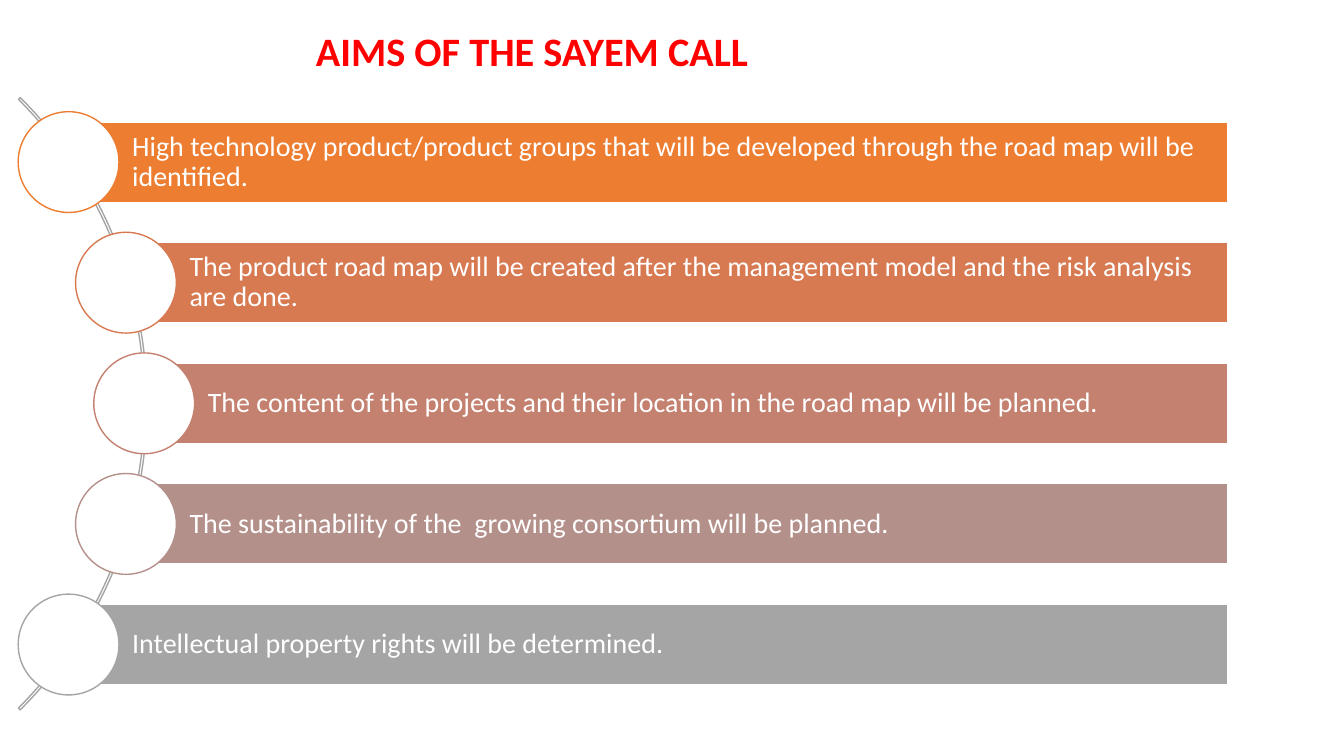
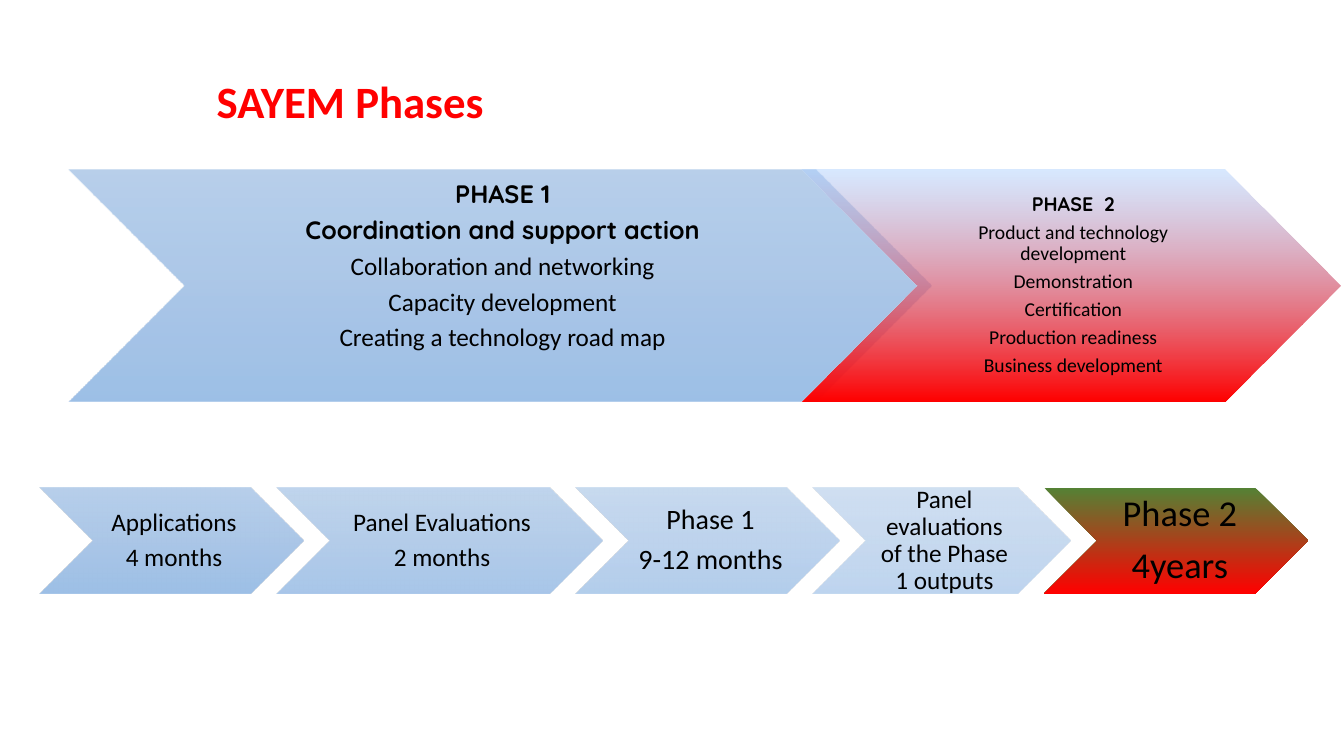
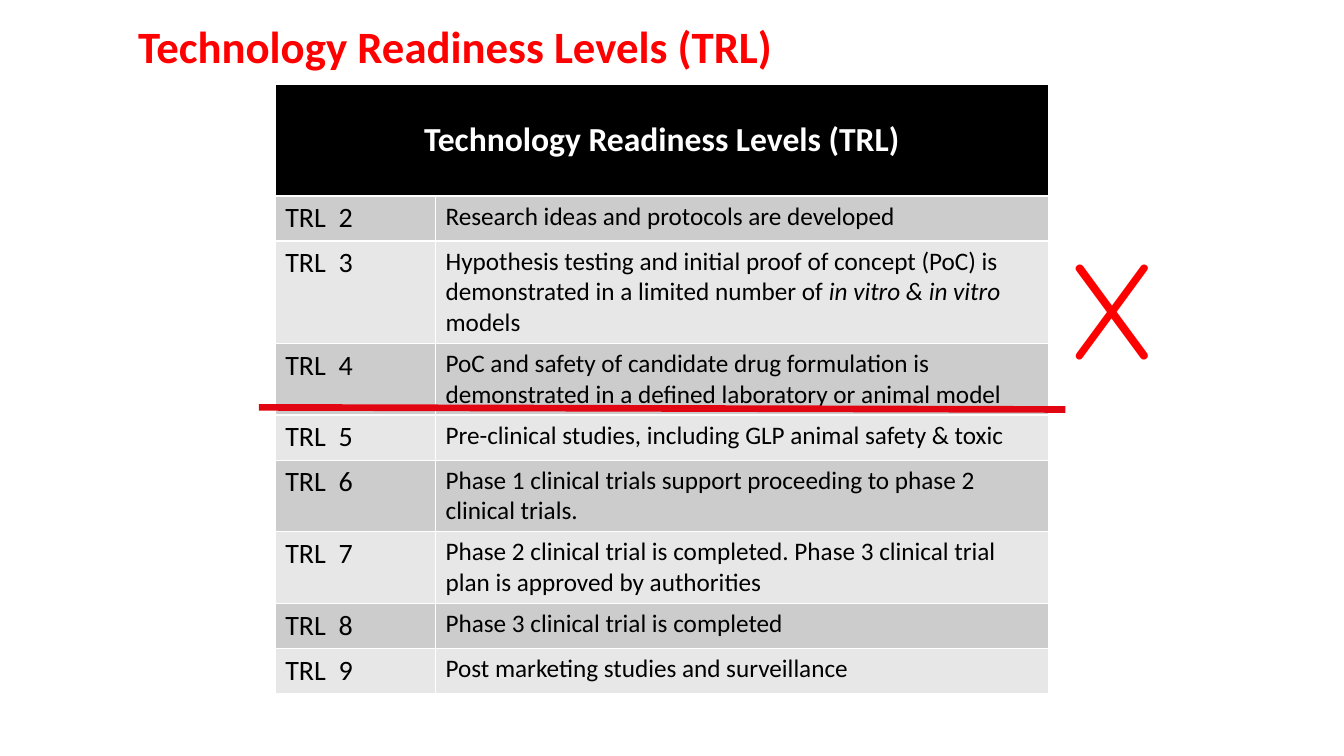
"""Build three slides on the SAYEM call: its aims, its phases and the readiness levels."""
import lxml.etree
import pptx
import pptx.dml.color
import pptx.enum.shapes
import pptx.enum.text
import pptx.oxml.ns
import pptx.util

Pt = pptx.util.Pt
SHAPE = pptx.enum.shapes.MSO_SHAPE
ALIGN = pptx.enum.text.PP_ALIGN
MIDDLE = pptx.enum.text.MSO_ANCHOR.MIDDLE
qn = pptx.oxml.ns.qn

COLORS = {
    "title": "FF0000", "text": "000000", "white": "FFFFFF", "arc": "A5A5A5",
    "header": "000000", "row_dark": "CCCCCC", "row_light": "E7E7E7",
    "cutoff": "E20613", "cross": "FF0000",
}
BODY_FONT, ACCENT_FONT = "Calibri", "Quicksand"

AIMS = [
    ("High technology product/product groups that will be developed through the road map will be identified.",
     49, "ED7D31"),
    ("The product road map will be created after the management model and the risk analysis are done.",
     90, "D87A51"),
    ("The content of the projects and their location in the road map will be planned.", 103, "C48170"),
    ("The sustainability of the  growing consortium will be planned.", 90, "B4908B"),
    ("Intellectual property rights will be determined.", 49, "A5A5A5"),
]


def blue_stops(alpha):
    """Return the blue gradient stops at one opacity."""
    return [(0, "B1CBE9", alpha), (50, "A3C1E5", alpha), (100, "93B9E4", alpha)]


TIMELINE = [
    (["Applications", "4 months"], 188.6, 18, blue_stops(90)),
    (["Panel Evaluations", "2 months"], 232.6, 18, blue_stops(80)),
    (["Phase 1", "9-12 months"], 188.6, 20, blue_stops(70)),
    (["Panel evaluations of the Phase 1 outputs"], 184.3, 18, blue_stops(60)),
    (["Phase 2", "4years"], 188.6, 26, [(0, "548235", 100), (100, "FF0000", 100)]),
]
PHASE_1 = ["PHASE 1", "Coordination and support action", "Collaboration and networking",
           "Capacity development", "Creating a technology road map"]
PHASE_2 = ["PHASE  2", "Product and technology development", "Demonstration",
           "Certification", "Production readiness", "Business development"]
LEVELS = [
    "Research ideas and protocols are developed",
    "Hypothesis testing and initial proof of concept (PoC) is demonstrated in a limited number of "
    "*in vitro & in vitro *models",
    "PoC and safety of candidate drug formulation is demonstrated in a defined laboratory or animal model",
    "Pre-clinical studies, including GLP animal safety & toxic",
    "Phase 1 clinical trials support proceeding to phase 2 clinical trials.",
    "Phase 2 clinical trial is completed. Phase 3 clinical trial plan is approved by authorities",
    "Phase 3 clinical trial is completed",
    "Post marketing studies and surveillance",
]


def rgb(color):
    """Turn a hex string into a colour."""
    return pptx.dml.color.RGBColor.from_string(color)


def box(left, top, width, height):
    """Convert a box in points to lengths."""
    return Pt(left), Pt(top), Pt(width), Pt(height)


def style(paragraph, size, color, bold=False, font=BODY_FONT, align=ALIGN.LEFT, spacing=None):
    """Format a paragraph and all its runs."""
    paragraph.alignment = align
    paragraph.line_spacing = spacing
    for run in paragraph.runs:
        run.font.name, run.font.size, run.font.bold = font, Pt(size), bold
        run.font.color.rgb = rgb(color)


def set_insets(frame, left, others, bottom=None):
    """Set the inner margins of a text frame in points."""
    frame.margin_left = Pt(left)
    frame.margin_top = frame.margin_right = Pt(others)
    frame.margin_bottom = Pt(others if bottom is None else bottom)


def add_titled_slide(deck, heading, place, size=32):
    """Add a slide with a red bold title."""
    slide = deck.slides.add_slide(deck.slide_layouts[5])
    title = slide.shapes.title
    title.left, title.top, title.width, title.height = box(*place)
    title.text_frame.text = heading
    title.text_frame.vertical_anchor = MIDDLE
    style(title.text_frame.paragraphs[0], size, COLORS["title"], bold=True, spacing=0.9)
    return slide


def add_outlined(slide, kind, place, line, fill=None):
    """Add a flat preset shape with a thin outline."""
    shape = slide.shapes.add_shape(kind, *box(*place))
    shape.shadow.inherit = False
    if fill:
        shape.fill.solid()
        shape.fill.fore_color.rgb = rgb(fill)
    else:
        shape.fill.background()
    shape.line.color.rgb = rgb(line)
    shape.line.width = Pt(1)
    return shape


def add_aim(slide, aim, left, middle, color):
    """Add one coloured bar with the circle on its left end."""
    right, bar_height, circle = 877, 57.4, 72
    bar = add_outlined(slide, SHAPE.RECTANGLE,
                       (left, middle - bar_height / 2, right - left, bar_height), COLORS["white"], color)
    frame = bar.text_frame
    frame.word_wrap = True
    frame.vertical_anchor = MIDDLE
    set_insets(frame, 45.4, 4)
    frame.text = aim
    style(frame.paragraphs[0], 20, COLORS["white"], spacing=0.9)
    add_outlined(slide, SHAPE.OVAL, (left - circle / 2, middle - circle / 2, circle, circle),
                 color, COLORS["white"])


def fill_gradient(shape, stops):
    """Fill a shape downwards with (position, colour, opacity) stops."""
    shape.fill.gradient()
    shape.fill.gradient_angle = 270
    stop_list = shape._element.spPr.find(".//" + qn("a:gsLst"))
    stop_list.clear()
    for position, color, alpha in stops:
        stop = lxml.etree.SubElement(stop_list, qn("a:gs"), pos=str(position * 1000))
        tint = lxml.etree.SubElement(stop, qn("a:srgbClr"), val=color)
        lxml.etree.SubElement(tint, qn("a:alpha"), val=str(alpha * 1000))


def add_chevron(slide, place, lines, size, stops, headings=0, bottom=None):
    """Add a gradient chevron with centred lines, the first ones as headings."""
    chevron = slide.shapes.add_shape(SHAPE.CHEVRON, *box(*place))
    chevron.shadow.inherit = False
    chevron.line.fill.background()
    fill_gradient(chevron, stops)
    frame = chevron.text_frame
    frame.word_wrap = True
    frame.vertical_anchor = MIDDLE
    set_insets(frame, 0.32 * size, 0.11 * size, bottom)
    frame.text = "\n".join(lines)
    for index, paragraph in enumerate(frame.paragraphs):
        heading = index < headings
        style(paragraph, size, COLORS["text"], heading, ACCENT_FONT if heading else BODY_FONT,
              ALIGN.CENTER, 0.9)
        if index < len(lines) - 1:
            paragraph.space_after = Pt(round(0.34 * size, 1))


def fill_cell(cell, text, size, fill, color, **options):
    """Write one table cell, with italics between asterisks."""
    cell.fill.solid()
    cell.fill.fore_color.rgb = rgb(fill)
    paragraph = cell.text_frame.paragraphs[0]
    for index, piece in enumerate(text.split("*")):
        run = paragraph.add_run()
        run.text = piece
        run.font.italic = index % 2 == 1
    style(paragraph, size, color, **options)


def add_levels_table(slide, heading):
    """Add the table of readiness levels."""
    row_height, header_height, widths = 32.2, 80, (114.5, 437.8)
    table = slide.shapes.add_table(
        len(LEVELS) + 1, 2,
        *box(196.6, 60, sum(widths), header_height + row_height * len(LEVELS))).table
    for column, width in zip(table.columns, widths):
        column.width = Pt(width)
    for row in table.rows:
        row.height = Pt(row_height)
    table.rows[0].height = Pt(header_height)
    header = table.cell(0, 0)
    header.merge(table.cell(0, 1))
    header.vertical_anchor = MIDDLE
    fill_cell(header, heading, 24, COLORS["header"], COLORS["white"], bold=True, align=ALIGN.CENTER)
    for row, description in enumerate(LEVELS, 1):
        fill = COLORS["row_dark" if row % 2 else "row_light"]
        fill_cell(table.cell(row, 0), f"TRL  {row + 1}", 20, fill, COLORS["text"])
        fill_cell(table.cell(row, 1), description, 18, fill, COLORS["text"])


def add_cutoff(slide, start, end):
    """Add the thick line below the excluded levels."""
    cutoff = slide.shapes.add_connector(
        pptx.enum.shapes.MSO_CONNECTOR.STRAIGHT, *map(Pt, start + end))
    cutoff.line.color.rgb = rgb(COLORS["cutoff"])
    cutoff.line.width = Pt(4.75)
    lxml.etree.SubElement(cutoff._element.spPr, qn("a:effectLst"))


def add_cross(slide, place):
    """Add the large X beside the excluded levels."""
    frame = slide.shapes.add_textbox(*box(*place)).text_frame
    frame.word_wrap = True
    frame.text = "X"
    style(frame.paragraphs[0], 96, COLORS["cross"], font=ACCENT_FONT)


def build_aims(deck):
    """Build the slide with the aims along an arc."""
    slide = add_titled_slide(deck, "AIMS OF THE SAYEM CALL", (218.5, 15, 678, 46), 28.8)
    arc = add_outlined(slide, SHAPE.BLOCK_ARC, (-513.4, -20.9, 618.5, 618.5), COLORS["arc"])
    for index, value in enumerate((189, 27, 0.003)):
        arc.adjustments[index] = value
    for index, (aim, left, color) in enumerate(AIMS):
        add_aim(slide, aim, left, 115.8 + 86.15 * index, color)


def build_phases(deck):
    """Build the slide with the two phases and the timeline."""
    slide = add_titled_slide(deck, "SAYEM Phases", (147.6, 49.7, 508, 49))
    left, overlap = 28.1, 19.1
    for lines, width, size, stops in TIMELINE:
        add_chevron(slide, (left, 348.3, width, 75.9), lines, size, stops)
        left += width - overlap
    add_chevron(slide, (49, 121, 616.3, 165.6), PHASE_1, 18, blue_stops(90), headings=2, bottom=28)
    add_chevron(slide, (572.6, 121, 385.2, 165.6), PHASE_2, 14,
                [(0, "B0D2FF", 50), (100, "FF0000", 100)], headings=1)


def build_levels(deck):
    """Build the slide with the readiness levels."""
    heading = "Technology Readiness Levels (TRL)"
    slide = add_titled_slide(deck, heading, (91.4, 10, 776, 50.4))
    add_levels_table(slide, heading)
    add_cutoff(slide, (185, 291), (761, 292.5))
    add_cross(slide, (758.2, 157, 126.7, 128))


def main():
    """Build and save the deck."""
    deck = pptx.Presentation()
    deck.slide_width, deck.slide_height = Pt(960), Pt(540)
    build_aims(deck)
    build_phases(deck)
    build_levels(deck)
    deck.save("out.pptx")


if __name__ == "__main__":
    main()
